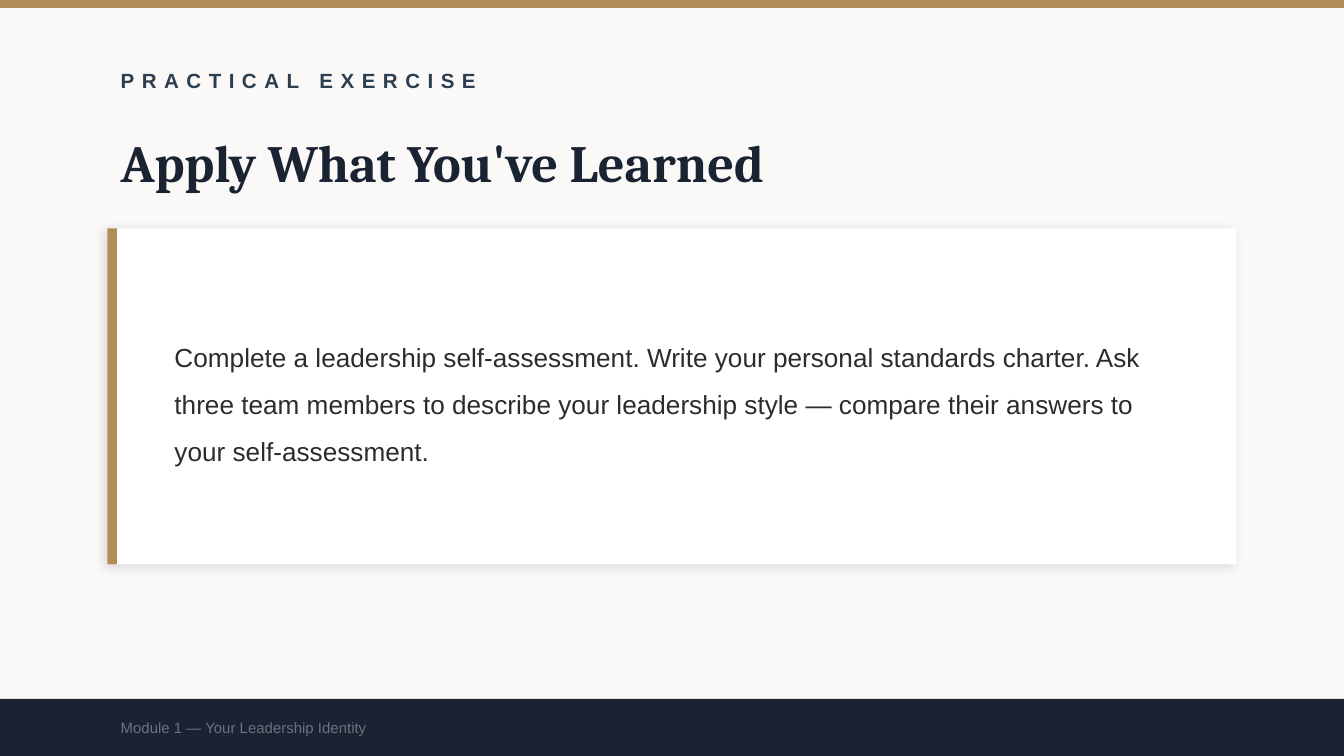
from lxml.etree import SubElement
from pptx import Presentation
from pptx.dml.color import RGBColor
from pptx.enum.shapes import MSO_SHAPE
from pptx.enum.text import MSO_ANCHOR
from pptx.oxml.ns import qn
from pptx.util import Pt

GOLD = "B08D57"
NAVY = "1A2332"
WIDTH, HEIGHT = 720, 405
MARGIN = 57.6
HEADING_WIDTH = 576
CARD_TOP, CARD_WIDTH, CARD_HEIGHT = 122.4, 604.8, 180
FOOTER_TOP = 374.4


def paint(fill, color):
    fill.solid()
    fill.fore_color.rgb = RGBColor.from_string(color)


def write(frame, text, size, color, font="Arial", bold=False, tracking=0, leading=None):
    paragraph = frame.paragraphs[0]
    if leading:
        paragraph.line_spacing = leading
    run = paragraph.add_run()
    run.text = text
    run.font.size = Pt(size)
    run.font.name = font
    run.font.bold = bold
    paint(run.font.fill, color)
    if tracking:
        run.font._element.set("spc", str(tracking * 100))


class SlideBuilder:
    def __init__(self, slide, background):
        self.slide = slide
        paint(slide.background.fill, background)

    def block(self, left, top, width, height, color):
        block = self.slide.shapes.add_shape(
            MSO_SHAPE.RECTANGLE, Pt(left), Pt(top), Pt(width), Pt(height))
        block.shadow.inherit = False
        paint(block.fill, color)
        block.line.fill.background()
        return block

    def card(self, left, top, width, height, color):
        card = self.block(left, top, width, height, color)
        effects = card._element.spPr.find(qn("a:effectLst"))
        shadow = SubElement(effects, qn("a:outerShdw"), blurRad=str(Pt(6)),
                            dist=str(Pt(2)), dir=str(135 * 60000),
                            algn="bl", rotWithShape="0")
        tint = SubElement(shadow, qn("a:srgbClr"), val="000000")
        SubElement(tint, qn("a:alpha"), val="12000")

    def text(self, left, top, width, height, text, **style):
        box = self.slide.shapes.add_textbox(Pt(left), Pt(top), Pt(width), Pt(height))
        frame = box.text_frame
        frame.word_wrap = True
        frame.vertical_anchor = MSO_ANCHOR.MIDDLE
        write(frame, text, **style)


def main():
    deck = Presentation()
    deck.slide_width, deck.slide_height = Pt(WIDTH), Pt(HEIGHT)
    page = SlideBuilder(deck.slides.add_slide(deck.slide_layouts[6]), "FAF9F7")

    page.block(0, 0, WIDTH, 4.32, GOLD)
    page.text(MARGIN, 28.8, HEADING_WIDTH, 28.8, "PRACTICAL EXERCISE",
              size=11, color="2C3E50", bold=True, tracking=4)
    page.text(MARGIN, 64.8, HEADING_WIDTH, 43.2, "Apply What You've Learned",
              size=28, color=NAVY, font="Cambria", bold=True)

    page.card(MARGIN, CARD_TOP, CARD_WIDTH, CARD_HEIGHT, "FFFFFF")
    page.block(MARGIN, CARD_TOP, 5.04, CARD_HEIGHT, GOLD)
    page.text(MARGIN + 28.8, CARD_TOP + 14.4, 554.4, CARD_HEIGHT - 28.8,
              "Complete a leadership self-assessment. Write your personal standards "
              "charter. Ask three team members to describe your leadership style — "
              "compare their answers to your self-assessment.",
              size=14, color="2C2C2C", leading=1.5)

    footer_height = HEIGHT - FOOTER_TOP
    page.block(0, FOOTER_TOP, WIDTH, footer_height, NAVY)
    page.text(MARGIN, FOOTER_TOP, HEADING_WIDTH, footer_height,
              "Module 1 — Your Leadership Identity", size=8, color="6B7280")

    deck.save("out.pptx")


if __name__ == "__main__":
    main()
